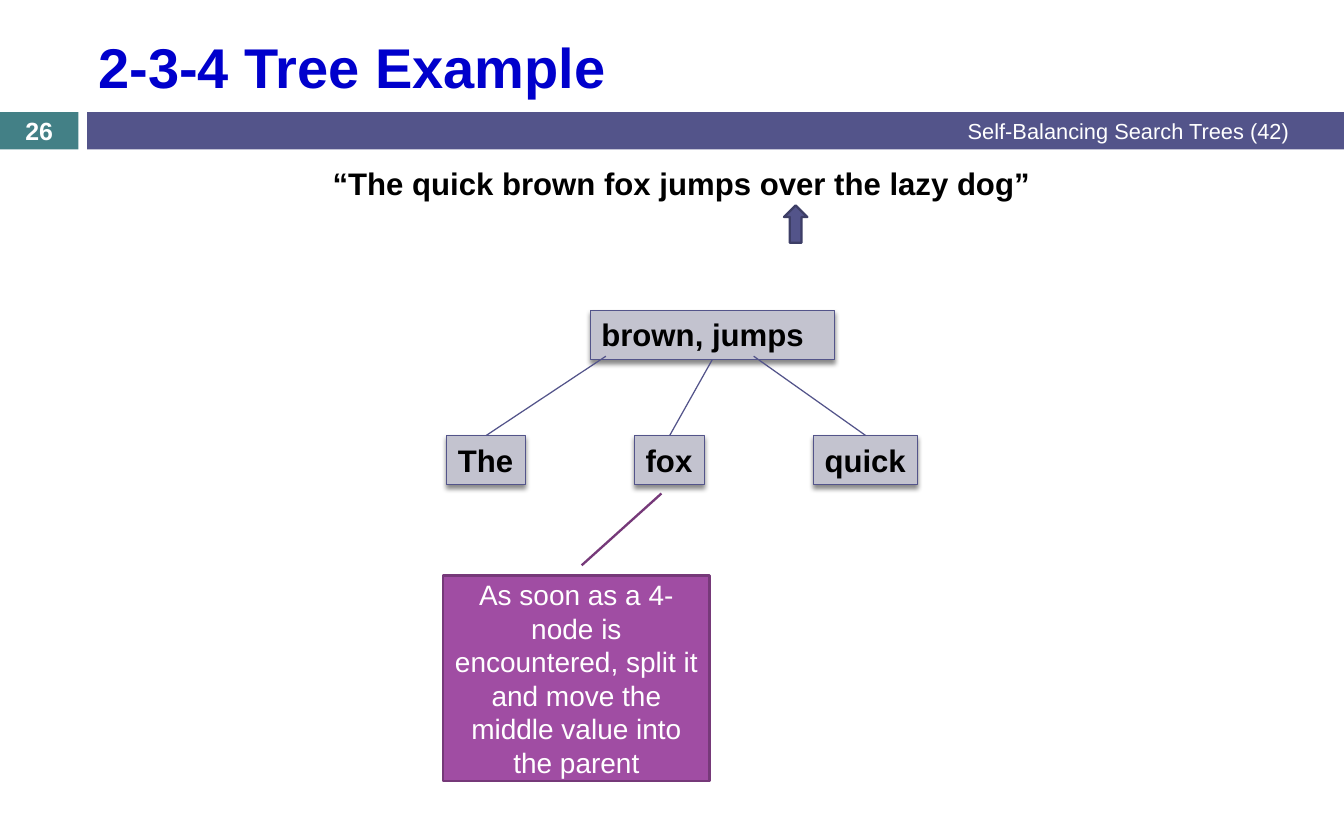
"""Build the 2-3-4 tree example slide."""
from lxml import etree
from pptx import Presentation
from pptx.dml.color import RGBColor
from pptx.enum.shapes import MSO_CONNECTOR, MSO_SHAPE
from pptx.enum.text import MSO_ANCHOR, PP_ALIGN
from pptx.oxml import parse_xml
from pptx.oxml.ns import qn
from pptx.util import Pt

RECT, UP_ARROW, CALLOUT = MSO_SHAPE.RECTANGLE, MSO_SHAPE.UP_ARROW, MSO_SHAPE.LINE_CALLOUT_1
STRAIGHT = MSO_CONNECTOR.STRAIGHT
LEFT, CENTER, RIGHT = PP_ALIGN.LEFT, PP_ALIGN.CENTER, PP_ALIGN.RIGHT
TOP, MIDDLE = MSO_ANCHOR.TOP, MSO_ANCHOR.MIDDLE
TEAL = RGBColor(0x43, 0x80, 0x86)
INDIGO = RGBColor(0x53, 0x54, 0x8A)
DARK_INDIGO = RGBColor(0x3D, 0x3E, 0x66)
NODE_FILL = RGBColor(0xC3, 0xC3, 0xCF)
PURPLE = RGBColor(0xA0, 0x4D, 0xA3)
DARK_PURPLE = RGBColor(0x76, 0x39, 0x79)
BLUE = RGBColor(0x00, 0x00, 0xCC)
BLACK = RGBColor(0x00, 0x00, 0x00)
WHITE = RGBColor(0xFF, 0xFF, 0xFF)
NODE_SHADOW = (
    '<a:effectLst xmlns:a="http://schemas.openxmlformats.org/drawingml/2006/main">'
    '<a:outerShdw blurRad="38100" dist="30480" dir="5400000" rotWithShape="0">'
    '<a:srgbClr val="000000"><a:alpha val="45000"/></a:srgbClr>'
    '</a:outerShdw></a:effectLst>')


def add_box(kind, x, y, w, h, fill, line=None, weight=0.79):
    sp = s.shapes.add_shape(kind, Pt(x), Pt(y), Pt(w), Pt(h))
    sp.shadow.inherit = False
    sp.fill.solid()
    sp.fill.fore_color.rgb = fill
    if line is None:
        sp.line.fill.background()
    else:
        sp.line.color.rgb = line
        sp.line.width = Pt(weight)
    return sp


def write(sp, text, size, color, align=LEFT, anchor=MIDDLE, bold=False, wrap=True):
    tf = sp.text_frame
    tf.text = text
    tf.word_wrap = wrap
    tf.vertical_anchor = anchor
    p = tf.paragraphs[0]
    p.alignment = align
    font = p.runs[0].font
    font.name = "Arial"
    font.size = Pt(size)
    font.bold = bold
    font.color.rgb = color


prs = Presentation()
prs.slide_width, prs.slide_height = Pt(864), Pt(540)
s = prs.slides.add_slide(prs.slide_layouts[5])

title = s.shapes.title
title.left, title.top, title.width, title.height = Pt(56), Pt(13.5), Pt(770), Pt(57.6)
write(title, "2-3-4 Tree Example", 36, BLUE, bold=True)

add_box(RECT, 0, 72, 50.4, 24, TEAL)
add_box(RECT, 56, 72, 808, 24, INDIGO)

for text, x, y, w, h, size, color, align, anchor, bold in (
        ("Self-Balancing Search Trees (42)", 324, 71.5, 512, 25, 14, WHITE, RIGHT, MIDDLE, False),
        ("26", 0, 72, 50.4, 24, 16, WHITE, CENTER, MIDDLE, True),
        ("“The quick brown fox jumps over the lazy dog” ", 120, 102, 642, 36, 20, BLACK,
         CENTER, TOP, True)):
    sp = s.shapes.add_textbox(Pt(x), Pt(y), Pt(w), Pt(h))
    write(sp, text, size, color, align, anchor, bold)
sp.text_frame.paragraphs[0].space_before = Pt(7)

nodes = {}
for text, x, y, w, wrap in (
        ("brown, jumps", 379.5, 199.5, 157, True),
        ("The", 287.2, 280, 50.6, False),
        ("fox", 408, 280, 45, False),
        ("quick", 523, 280, 67, False)):
    node = add_box(RECT, x, y, w, 31.5, NODE_FILL, INDIGO)
    node._element.spPr.replace(node._element.spPr.find(qn("a:effectLst")),
                               parse_xml(NODE_SHADOW))
    write(node, text, 20, BLACK, anchor=TOP, bold=True, wrap=wrap)
    nodes[text] = node

for child, x in (("The", 389.5), ("fox", 458), ("quick", 484.5)):
    edge = s.shapes.add_connector(STRAIGHT, Pt(x), Pt(229), Pt(x), Pt(280))
    if child == "fox":
        edge.begin_connect(nodes["brown, jumps"], 2)
    edge.end_connect(nodes[child], 0)
    edge.line.color.rgb = INDIGO
    edge.line.width = Pt(0.79)
    etree.SubElement(edge._element.spPr, qn("a:effectLst"))

callout = add_box(CALLOUT, 285, 370, 171, 132, PURPLE, DARK_PURPLE, 1.5)
for i, value in enumerate((-0.05, 0.52, -0.4, 0.82)):
    callout.adjustments[i] = value
write(callout, "As soon as a 4-node is encountered, split it and move the middle value "
      "into the parent", 18, WHITE, CENTER)

add_box(UP_ARROW, 504, 132, 15, 24, INDIGO, DARK_INDIGO, 1.5)

prs.save("out.pptx")
